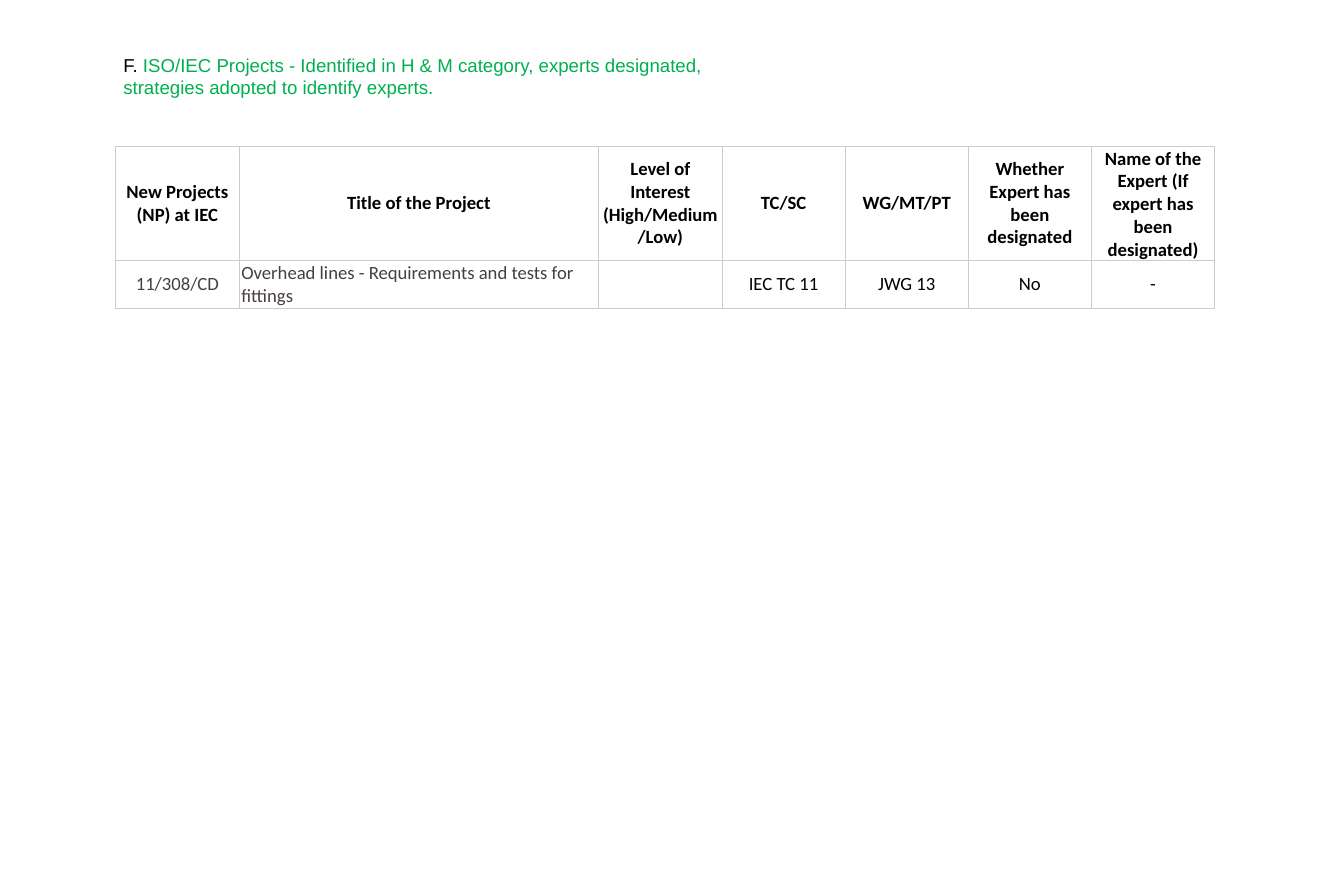
"""Build the slide listing ISO/IEC projects and their designated experts."""
from lxml.etree import SubElement
from pptx import Presentation
from pptx.dml.color import RGBColor
from pptx.enum.text import MSO_ANCHOR as ANCHOR, MSO_AUTO_SIZE as AUTO_SIZE, PP_ALIGN as ALIGN
from pptx.oxml.ns import qn
from pptx.util import Cm, Pt

BLACK = RGBColor(0x00, 0x00, 0x00)
GREEN = RGBColor(0x00, 0xB0, 0x50)
GREY = RGBColor(0x47, 0x3F, 0x3F)
BORDER = RGBColor(0xCC, 0xCC, 0xCC)

HEADERS = [
    "New Projects (NP) at IEC",
    "Title of the Project",
    "Level of Interest (High/Medium/Low)",
    "TC/SC",
    "WG/MT/PT",
    "Whether Expert has been designated",
    "Name of the Expert (If expert has been designated)",
]
PROJECT = [
    "11/308/CD",
    "Overhead lines - Requirements and tests for fittings",
    "",
    "IEC TC 11",
    "JWG 13",
    "No",
    "-",
]
TITLE_COL = 1
COL_WIDTH, TITLE_WIDTH = Cm(4.19), Cm(12.24)
ROW_HEIGHTS = [Cm(3.86), Cm(1.63)]


def format_run(r, font, color, bold=False):
    """Set the font, colour and weight of a run."""
    r.font.name = font
    r.font.size = Pt(18)
    r.font.bold = bold
    r.font.color.rgb = color


def set_heading(sp, parts):
    """Place the title and write its coloured parts."""
    sp.left, sp.top, sp.width, sp.height = Cm(3.94), Cm(1.7), Cm(22.86), Cm(1.8)
    tf = sp.text_frame
    tf.word_wrap = True
    tf.auto_size = AUTO_SIZE.SHAPE_TO_FIT_TEXT
    tf.vertical_anchor = ANCHOR.TOP
    p = tf.paragraphs[0]
    p.alignment = ALIGN.LEFT
    for text, color in parts:
        r = p.add_run()
        r.text = text
        format_run(r, "Arial", color)


def set_borders(cell):
    """Draw a thin line on all four sides of a cell."""
    tc_pr = cell._tc.get_or_add_tcPr()
    for i, side in enumerate(("a:lnL", "a:lnR", "a:lnT", "a:lnB")):
        ln = SubElement(tc_pr, qn(side), w=str(Pt(0.75)))
        fill = SubElement(ln, qn("a:solidFill"))
        SubElement(fill, qn("a:srgbClr"), val=str(BORDER))
        tc_pr.insert(i, ln)


def fill_cell(cell, text, color, bold, align, inset_x, inset_y):
    """Write and format one table cell."""
    cell.fill.background()
    set_borders(cell)
    cell.vertical_anchor = ANCHOR.MIDDLE
    cell.margin_left = cell.margin_right = inset_x
    cell.margin_top = cell.margin_bottom = inset_y
    p = cell.text_frame.paragraphs[0]
    p.text = text
    p.alignment = align
    for r in p.runs:
        format_run(r, "Calibri", color, bold)


def add_project_table(slide):
    """Add the table with its header and project rows."""
    width = TITLE_WIDTH + COL_WIDTH * (len(HEADERS) - 1)
    table = slide.shapes.add_table(
        len(ROW_HEIGHTS), len(HEADERS), Cm(3.94), Cm(4.98), width, sum(ROW_HEIGHTS)
    ).table
    table.first_row = table.horz_banding = False
    for row, height in zip(table.rows, ROW_HEIGHTS):
        row.height = height
    for i, (header, value) in enumerate(zip(HEADERS, PROJECT)):
        is_title = i == TITLE_COL
        table.columns[i].width = TITLE_WIDTH if is_title else COL_WIDTH
        fill_cell(table.cell(0, i), header, BLACK, True, ALIGN.CENTER, Cm(0.03), Cm(0.03))
        color = GREY if i <= TITLE_COL else BLACK
        align = ALIGN.LEFT if is_title else ALIGN.CENTER
        fill_cell(table.cell(1, i), value, color, False, align, Cm(0.08), Cm(0.05))


def main():
    """Create the slide and save it."""
    prs = Presentation()
    prs.slide_width, prs.slide_height = Cm(45.72), Cm(30.48)
    slide = prs.slides.add_slide(prs.slide_layouts[5])
    set_heading(slide.shapes.title, [
        ("F. ", BLACK),
        ("ISO/IEC Projects - Identified in H & M category, experts designated, "
         "strategies adopted to identify experts.", GREEN),
    ])
    add_project_table(slide)
    prs.save("out.pptx")


if __name__ == "__main__":
    main()
